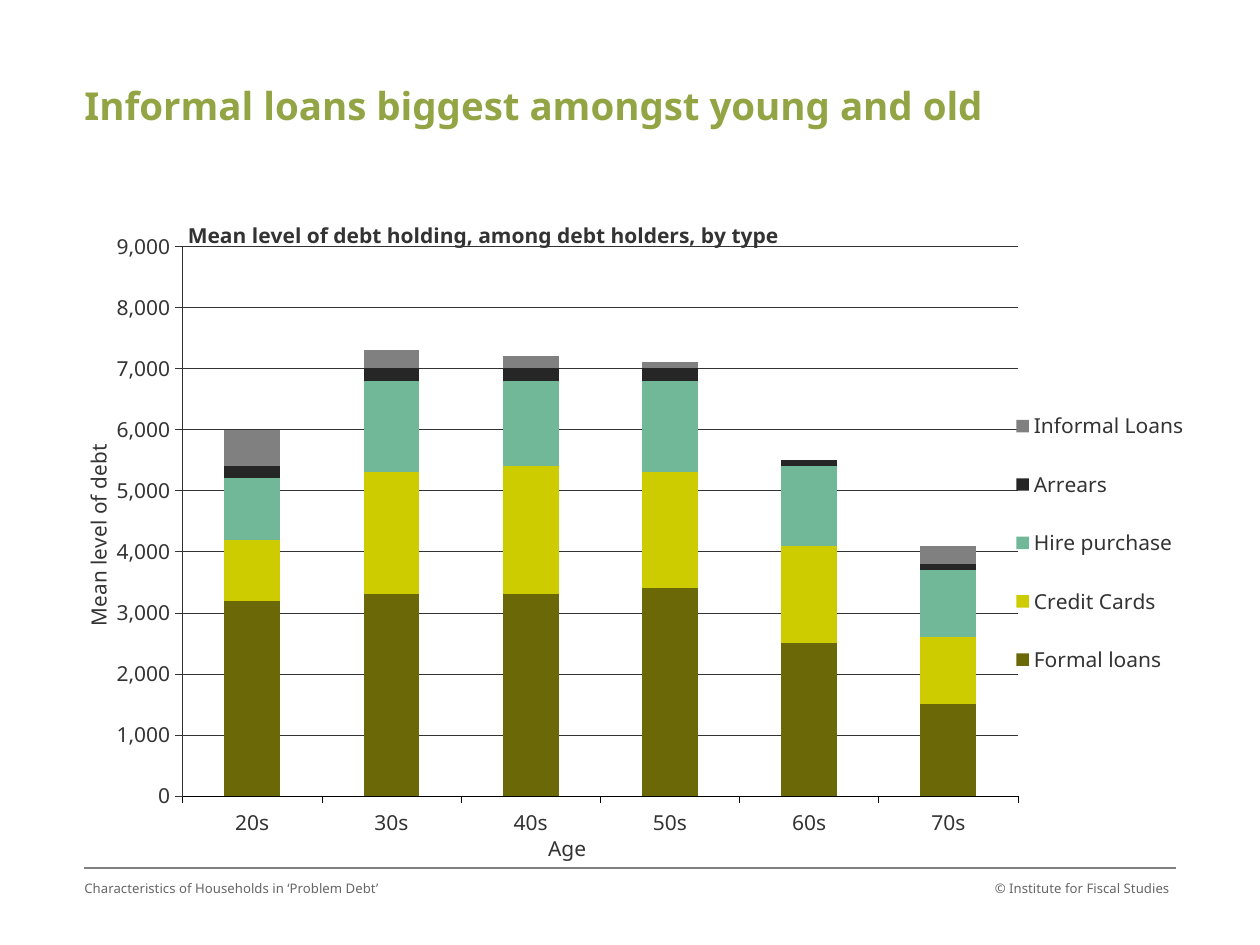
"""Build a slide with a stacked column chart of mean debt by age and type."""
from lxml.etree import SubElement
from pptx import Presentation
from pptx.chart.data import CategoryChartData
from pptx.dml.color import RGBColor
from pptx.enum.chart import XL_CHART_TYPE, XL_LEGEND_POSITION, XL_TICK_MARK
from pptx.enum.dml import MSO_LINE
from pptx.enum.shapes import MSO_CONNECTOR
from pptx.enum.text import PP_ALIGN
from pptx.oxml import parse_xml
from pptx.oxml.ns import nsdecls, qn
from pptx.util import Inches, Pt

FONT = "Noto Sans"
COLORS = {
    "title": "93A445",
    "footer": "666666",
    "rule": "808080",
    "chart_text": "333333",
    "category_line": "000000",
}
CHART_WIDTH, CHART_HEIGHT = 8.98, 5.28
CATEGORIES = ["20s", "30s", "40s", "50s", "60s", "70s"]
SERIES = [
    ("Formal loans", [3200, 3300, 3300, 3400, 2500, 1500], "6A6807"),
    ("Credit Cards", [1000, 2000, 2100, 1900, 1600, 1100], "CCCC00"),
    ("Hire purchase", [1000, 1500, 1400, 1500, 1300, 1100], "70B898"),
    ("Arrears", [200, 200, 200, 200, 100, 100], "262626"),
    ("Informal Loans", [600, 300, 200, 100, 0, 300], "808080"),
]


def style_font(font, size, color, bold=False):
    font.name = FONT
    font.size = Pt(size)
    font.bold = bold
    font.color.rgb = RGBColor.from_string(color)


def place(parent, index, inner=False, **inches):
    for old_layout in parent.findall(qn("c:layout")):
        parent.remove(old_layout)
    layout = parse_xml(f"<c:layout {nsdecls('c')}><c:manualLayout/></c:layout>")
    if inner:
        SubElement(layout[0], qn("c:layoutTarget")).set("val", "inner")
    for axis_name in "xy":
        SubElement(layout[0], qn(f"c:{axis_name}Mode")).set("val", "edge")
    for key, value in inches.items():
        extent = CHART_WIDTH if key in "xw" else CHART_HEIGHT
        SubElement(layout[0], qn(f"c:{key}")).set("val", str(value / extent))
    parent.insert(index, layout)


presentation = Presentation()
presentation.slide_width = Inches(10)
presentation.slide_height = Inches(7.5)
slide = presentation.slides.add_slide(presentation.slide_layouts[6])

rule = slide.shapes.add_connector(
    MSO_CONNECTOR.STRAIGHT, Inches(0.67), Inches(6.89), Inches(9.33), Inches(6.89)
)
rule.line.color.rgb = RGBColor.from_string(COLORS["rule"])
rule.line.width = Pt(0.75)
SubElement(rule._element.spPr, qn("a:effectLst"))

TEXTS = [
    ("Informal loans biggest amongst young and old",
     0.67, 0.65, 7.17, 0.44, 22, COLORS["title"], True, PP_ALIGN.LEFT),
    ("© Institute for Fiscal Studies",
     7.6, 6.99, 1.68, 0.4, 7.5, COLORS["footer"], False, PP_ALIGN.RIGHT),
    ("Characteristics of Households in ‘Problem Debt’",
     0.67, 6.99, 3.17, 0.4, 7.5, COLORS["footer"], False, PP_ALIGN.LEFT),
]
for text, left, top, width, height, size, color, bold, alignment in TEXTS:
    box = slide.shapes.add_textbox(Inches(left), Inches(top), Inches(width), Inches(height))
    frame = box.text_frame
    frame.word_wrap = True
    frame.margin_left = frame.margin_right = frame.margin_top = frame.margin_bottom = 0
    paragraph = frame.paragraphs[0]
    paragraph.alignment = alignment
    run = paragraph.add_run()
    run.text = text
    style_font(run.font, size, color, bold)

chart_data = CategoryChartData(number_format="#,##0")
chart_data.categories = CATEGORIES
for name, values, color in SERIES:
    chart_data.add_series(name, values)
chart = slide.shapes.add_chart(
    XL_CHART_TYPE.COLUMN_STACKED,
    Inches(0.51), Inches(1.62), Inches(CHART_WIDTH), Inches(CHART_HEIGHT), chart_data,
).chart
style_font(chart.font, 12, COLORS["chart_text"])

plot = chart.plots[0]
plot.overlap = 100
plot.gap_width = 150
plot.vary_by_categories = False
for series, (name, values, color) in zip(plot.series, SERIES):
    series.format.fill.solid()
    series.format.fill.fore_color.rgb = RGBColor.from_string(color)

category_axis, value_axis = chart.category_axis, chart.value_axis
value_axis.minimum_scale = 0
value_axis.maximum_scale = 9000
value_axis.major_unit = 1000
value_axis.tick_labels.number_format = "#,##0"
value_axis.tick_labels.number_format_is_linked = False
value_axis.has_major_gridlines = True
gridline = value_axis.major_gridlines.format.line
gridline.dash_style = MSO_LINE.ROUND_DOT
for line, color in [
    (category_axis.format.line, COLORS["category_line"]),
    (value_axis.format.line, COLORS["chart_text"]),
    (gridline, COLORS["chart_text"]),
]:
    line.color.rgb = RGBColor.from_string(color)
    line.width = Pt(0.25)
for axis in (category_axis, value_axis):
    axis.major_tick_mark = XL_TICK_MARK.OUTSIDE

for title, text, bold, x, y in [
    (chart.chart_title, "Mean level of debt holding, among debt holders, by type", True, 0.95, 0.09),
    (category_axis.axis_title, "Age", False, 3.81, 5.02),
    (value_axis.axis_title, "Mean level of debt", False, 0.11, 1.92),
]:
    run = title.text_frame.paragraphs[0].add_run()
    run.text = text
    style_font(run.font, 12, COLORS["chart_text"], bold)
    place(title._element, 1, x=x, y=y)
value_axis.axis_title._element.find(".//" + qn("a:bodyPr")).set("rot", "-5400000")
chart.chart_title.include_in_layout = True

chart.has_legend = True
chart.legend.position = XL_LEGEND_POSITION.RIGHT
chart.legend.include_in_layout = True
style_font(chart.legend.font, 12, COLORS["chart_text"])
place(chart.legend._element, 1, x=7.5, y=1.43, w=1.44, h=2.59)
place(chart._chartSpace.chart.plotArea, 0, inner=True, x=0.94, y=0.34, w=6.63, h=4.42)

presentation.save("out.pptx")
